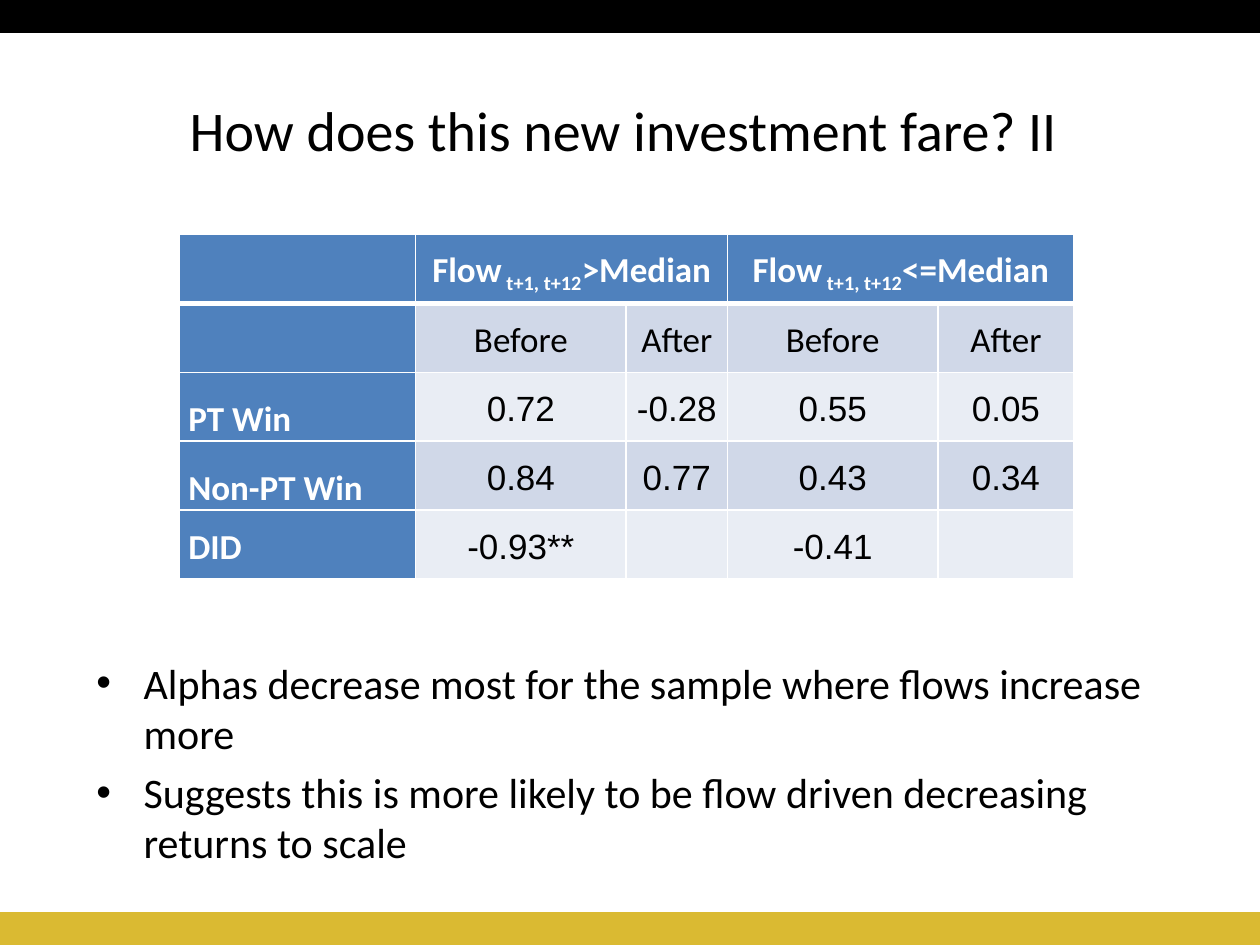
import pptx
import pptx.dml.color
import pptx.enum.shapes
import pptx.enum.text
import pptx.oxml
import pptx.oxml.ns
import pptx.util

Pt = pptx.util.Pt
ALIGN = pptx.enum.text.PP_ALIGN
ANCHOR = pptx.enum.text.MSO_ANCHOR
BLUE, WHITE, BLACK, GOLD = "4F81BD", "FFFFFF", "000000", "DABA32"
BANDS = ["D0D8E8", "E9EDF4"]


def rgb(code):
    return pptx.dml.color.RGBColor.from_string(code)


def write(p, text, size=20, font="Calibri", color=BLACK, bold=False, baseline=0):
    r = p.add_run()
    r.text = text
    r.font.size = Pt(size)
    r.font.name = font
    r.font.bold = bold
    r.font.color.rgb = rgb(color)
    if baseline:
        r.font._element.set("baseline", str(baseline * 1000))


prs = pptx.Presentation()
prs.slide_width, prs.slide_height = Pt(720), Pt(540)
s = prs.slides.add_slide(prs.slide_layouts[5])

# Title
title = s.shapes.title
title.left, title.top, title.width, title.height = Pt(-3), Pt(29), Pt(726), Pt(90)
tf = title.text_frame
tf.vertical_anchor = ANCHOR.MIDDLE
p = tf.paragraphs[0]
p.alignment = ALIGN.CENTER
write(p, "How does this new investment fare? II ", size=32)

# Bars along the top and bottom edges
for top, color in [(0, BLACK), (522, GOLD)]:
    sp = s.shapes.add_shape(pptx.enum.shapes.MSO_SHAPE.RECTANGLE, 0, Pt(top), Pt(720), Pt(18))
    sp.shadow.inherit = False
    sp.fill.solid()
    sp.fill.fore_color.rgb = rgb(color)
    sp.line.color.rgb = rgb(color)
    sp.line.width = Pt(2)

# Bullets
sp = s.shapes.add_textbox(Pt(48), Pt(372), Pt(636.5), Pt(135))
tf = sp.text_frame
tf.word_wrap = True
bullets = [
    "Alphas decrease most for the sample where flows increase more",
    "Suggests this is more likely to be flow driven decreasing returns to scale",
]
for i, text in enumerate(bullets):
    p = tf.add_paragraph() if i else tf.paragraphs[0]
    p.space_before = Pt(4.8)
    pPr = p._p.get_or_add_pPr()
    pPr.set("marL", str(Pt(27)))
    pPr.set("indent", str(Pt(-27)))
    ns = pptx.oxml.ns.nsdecls("a")
    pPr.append(pptx.oxml.parse_xml(f'<a:buFont {ns} typeface="Arial"/>'))
    pPr.append(pptx.oxml.parse_xml(f'<a:buChar {ns} char="•"/>'))
    write(p, text, size=24)

# Table of alphas before and after, split by flow
rows = [
    ["", ">Median", "", "<=Median", ""],
    ["", "Before", "After", "Before", "After"],
    ["PT Win", "0.72", "-0.28", "0.55", "0.05"],
    ["Non-PT Win", "0.84", "0.77", "0.43", "0.34"],
    ["DID", "-0.93**", "", "-0.41", ""],
]
widths = [135.4, 120.2, 58, 120.2, 77.8]
row_height = 39.4
table = s.shapes.add_table(len(rows), len(widths), Pt(102.2), Pt(134),
                           Pt(sum(widths)), Pt(row_height * len(rows))).table
for column, width in zip(table.columns, widths):
    column.width = Pt(width)
for row in table.rows:
    row.height = Pt(row_height)
for first in (1, 3):
    table.cell(0, first).merge(table.cell(0, first + 1))

for i, row in enumerate(rows):
    for j, text in enumerate(row):
        cell = table.cell(i, j)
        header = i == 0 or j == 0
        tcPr = cell._tc.get_or_add_tcPr()
        for side in "LRTB":
            heavy = (i, side) in [(0, "B"), (1, "T")]
            tcPr.append(pptx.oxml.parse_xml(
                f'<a:ln{side} {pptx.oxml.ns.nsdecls("a")} w="{Pt(3 if heavy else 1)}">'
                f'<a:solidFill><a:srgbClr val="{WHITE}"/></a:solidFill></a:ln{side}>'))
        cell.fill.solid()
        cell.fill.fore_color.rgb = rgb(BLUE if header else BANDS[(i - 1) % 2])
        if not text:
            continue
        cell.margin_left = cell.margin_right = Pt(5.4)
        cell.margin_top = cell.margin_bottom = 0
        cell.vertical_anchor = ANCHOR.BOTTOM if j == 0 and i < 4 else ANCHOR.MIDDLE
        p = cell.text_frame.paragraphs[0]
        p.alignment = ALIGN.CENTER if j else ALIGN.LEFT
        p.line_spacing = 1.15
        p.space_after = Pt(10)
        style = dict(color=WHITE if header else BLACK, bold=header,
                     font="Arial" if i > 1 and j else "Calibri")
        if i == 0:
            write(p, "Flow", **style)
            write(p, " t+1, t+12", baseline=-25, **style)
        write(p, text, **style)

prs.save("out.pptx")
